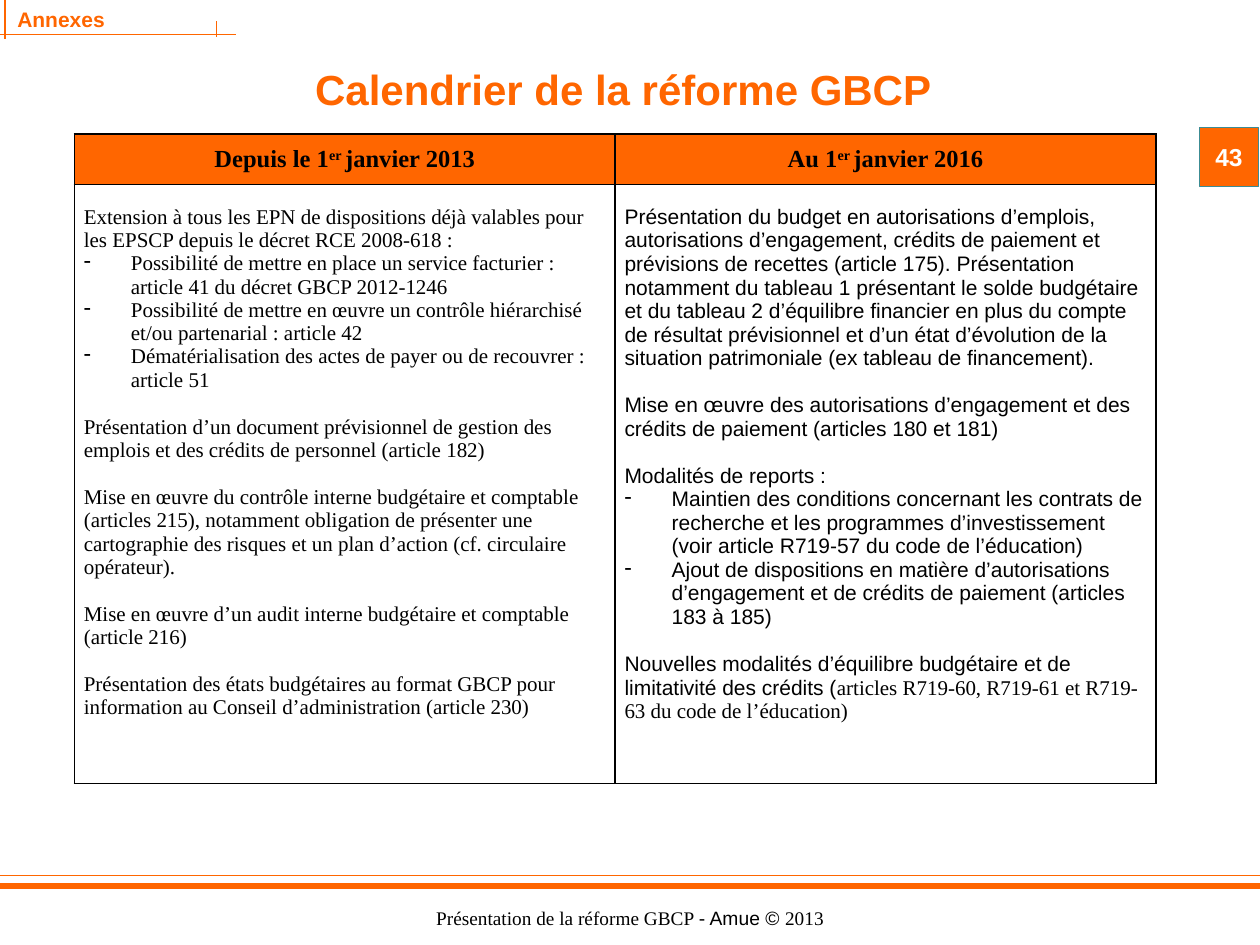
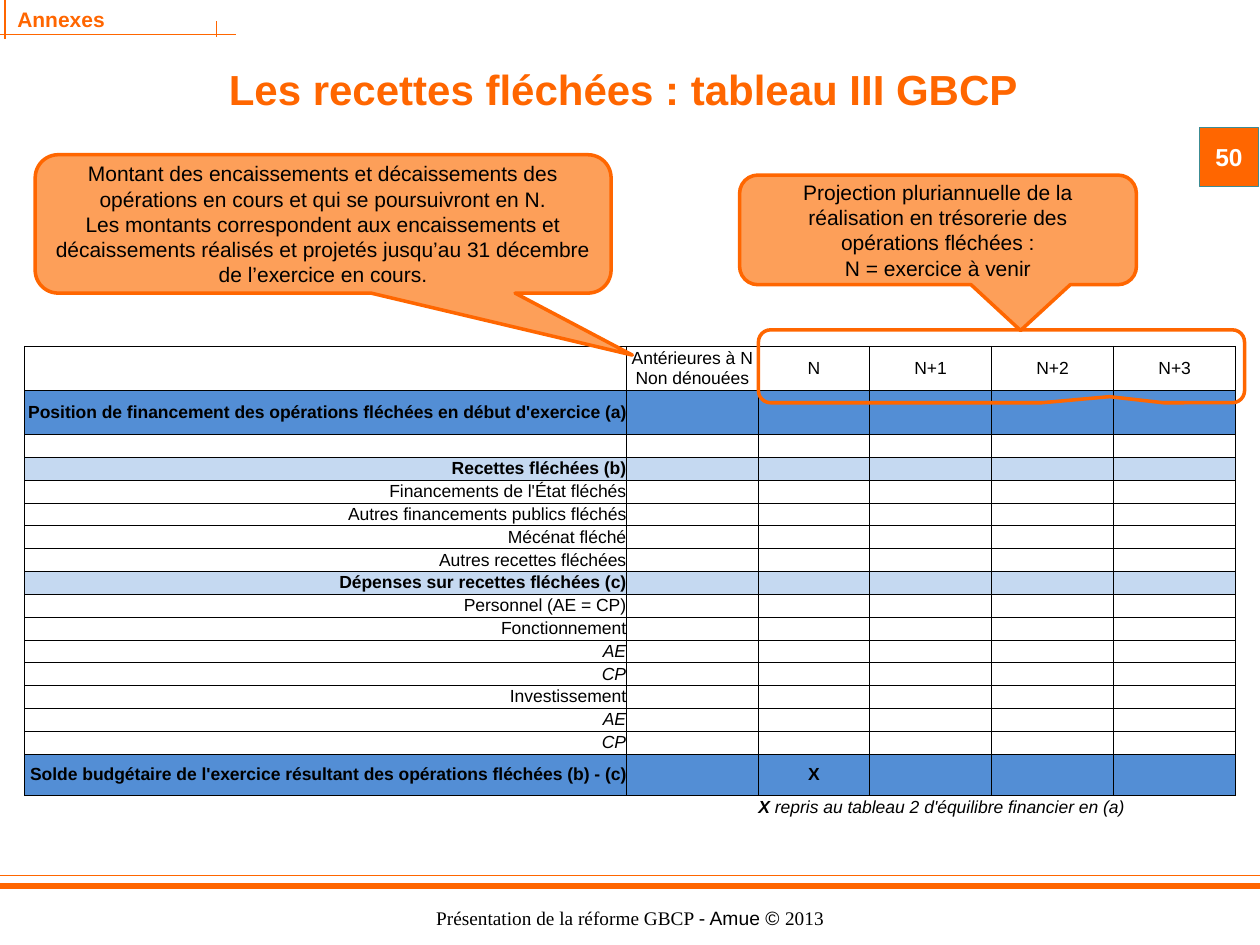
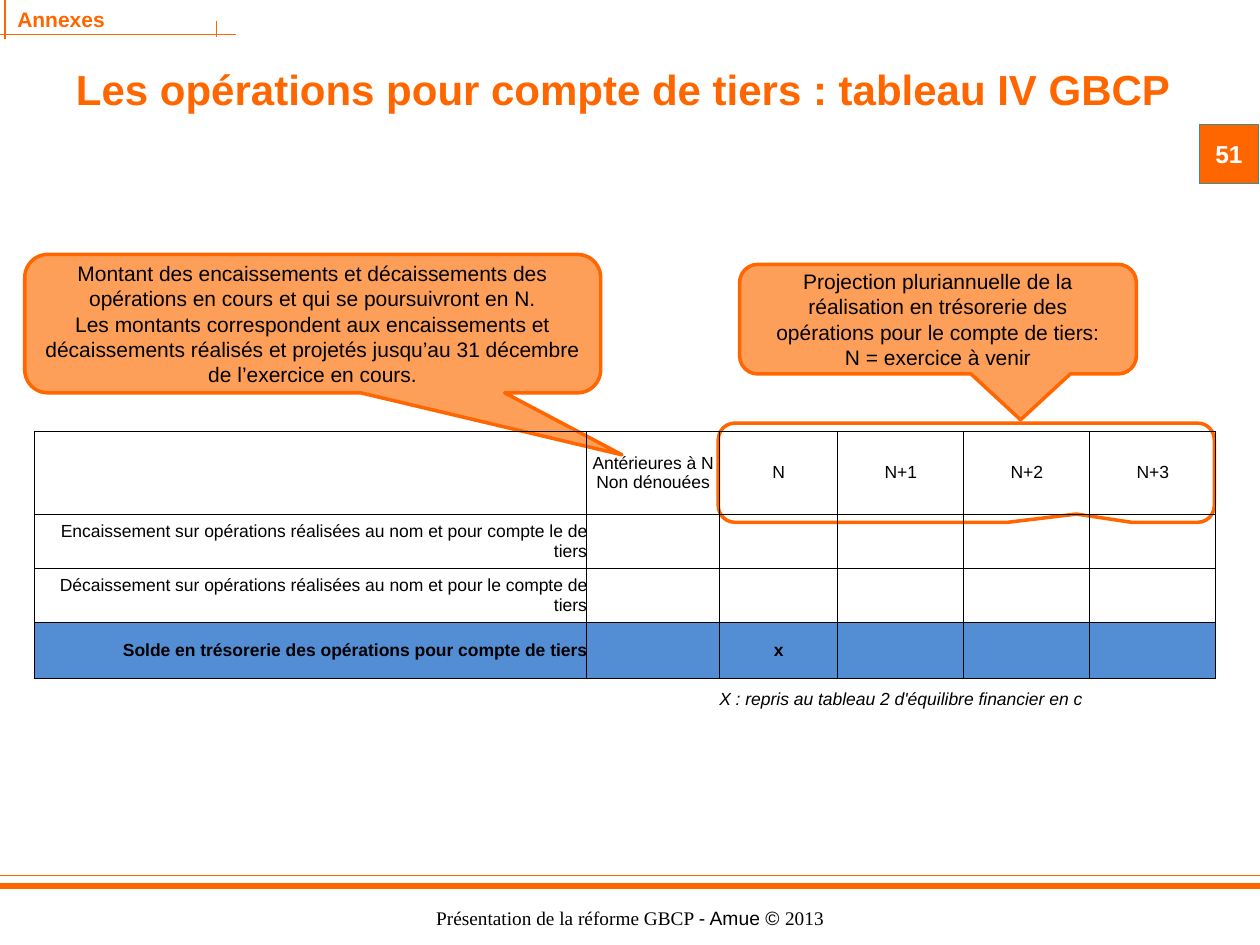
from lxml.etree import SubElement
from pptx import Presentation
from pptx.dml.color import RGBColor as RGB
from pptx.enum.shapes import MSO_CONNECTOR as LINK, MSO_SHAPE as SHAPE
from pptx.enum.text import MSO_ANCHOR as ANCHOR, PP_ALIGN as ALIGN
from pptx.oxml.ns import qn
from pptx.util import Cm, Pt

ORANGE, PEACH, TEAL = "FF6600", "FD9F59", "3C8C93"
BLUE, PALE, BLACK, WHITE = "538ED5", "C5D9F1", "000000", "FFFFFF"
SANS, SERIF = "Arial", "Times New Roman"
NO_GRID = "{2D5ABB26-0587-4C30-8999-92F81FD0307C}"

SINCE = [
    ("", "Extension à tous les EPN de dispositions déjà valables pour les EPSCP depuis le décret RCE 2008-618 :"),
    ("dash", "Possibilité de mettre en place un service facturier : article 41 du décret GBCP 2012-1246"),
    ("dash", "Possibilité de mettre en œuvre un contrôle hiérarchisé et/ou partenarial : article 42"),
    ("dash", "Dématérialisation des actes de payer ou de recouvrer : article 51"),
    ("gap", "Présentation d’un document prévisionnel de gestion des emplois et des crédits de personnel (article 182)"),
    ("gap", "Mise en œuvre du contrôle interne budgétaire et comptable (articles 215), notamment obligation de "
            "présenter une cartographie des risques et un plan d’action (cf. circulaire opérateur)."),
    ("gap", "Mise en œuvre d’un audit interne budgétaire et comptable (article 216)"),
    ("gap", "Présentation des états budgétaires au format GBCP pour information au Conseil d’administration "
            "(article 230)"),
]
FROM_2016 = [
    ("", "Présentation du budget en autorisations d’emplois, autorisations d’engagement, crédits de paiement et "
         "prévisions de recettes (article 175). Présentation notamment du tableau 1 présentant le solde budgétaire "
         "et du tableau 2 d’équilibre financier en plus du compte de résultat prévisionnel et d’un état "
         "d’évolution de la situation patrimoniale (ex tableau de financement)."),
    ("gap", "Mise en œuvre des autorisations d’engagement et des crédits de paiement (articles 180 et 181)"),
    ("gap", "Modalités de reports :"),
    ("dash", "Maintien des conditions concernant les contrats de recherche et les programmes d’investissement "
             "(voir article R719-57 du code de l’éducation)"),
    ("dash", "Ajout de dispositions en matière d’autorisations d’engagement et de crédits de paiement "
             "(articles 183 à 185)"),
    ("gap", "Nouvelles modalités d’équilibre budgétaire et de limitativité des crédits ("),
]
PAST = ["Montant des encaissements et décaissements des opérations en cours et qui se poursuivront en N.",
        "Les montants correspondent aux encaissements et décaissements réalisés et projetés jusqu’au "
        "31 décembre de l’exercice en cours."]
PLAN = "Projection pluriannuelle de la réalisation en trésorerie des opérations "
NEXT = "N = exercice à venir"
YEARS = ["N", "N+1", "N+2", "N+3"]
PLAIN, PART, ITAL = (None, False, False), (PALE, True, False), (None, False, True)
TOTAL = (BLUE, True, False)
ARROWED = [
    ("Position de financement des opérations fléchées en début d'exercice (a)", 0.89, TOTAL),
    ("", 0.46, PLAIN),
    ("Recettes fléchées (b)", 0.46, PART),
    ("Financements de l'État fléchés", 0.46, PLAIN),
    ("Autres financements publics fléchés", 0.46, PLAIN),
    ("Mécénat fléché", 0.46, PLAIN),
    ("Autres recettes fléchées", 0.46, PLAIN),
    ("Dépenses sur recettes fléchées (c)", 0.46, PART),
    ("Personnel (AE = CP)", 0.46, PLAIN),
    ("Fonctionnement", 0.46, PLAIN),
    ("AE", 0.46, ITAL),
    ("CP", 0.46, ITAL),
    ("Investissement", 0.46, PLAIN),
    ("AE", 0.46, ITAL),
    ("CP", 0.46, ITAL),
    ("Solde budgétaire de l'exercice résultant des opérations fléchées (b) - (c)", 0.84, TOTAL),
]
THIRD = [
    ("Encaissement sur opérations réalisées au nom et pour compte le de tiers", 1.09, PLAIN),
    ("Décaissement sur opérations réalisées au nom et pour le compte de tiers", 1.09, PLAIN),
    ("Solde en trésorerie des opérations pour compte de tiers", 1.13, TOTAL),
]


def color(code):
    """Turn a hex string into a colour."""
    return RGB.from_string(code)


def paint(fill, code):
    """Fill with a colour, or leave clear when there is none."""
    if code:
        fill.solid()
        fill.fore_color.rgb = color(code)
    else:
        fill.background()


def say(para, text, size, face=SANS, tint=BLACK, bold=False, ital=False, lift=0):
    """Add one run to a paragraph."""
    run = para.add_run()
    run.text = text
    font = run.font
    font.size, font.name, font.bold, font.italic = Pt(size), face, bold, ital
    font.color.rgb = color(tint)
    if lift:
        run._r.get_or_add_rPr().set("baseline", str(lift * 1000))


def label(slide, box, align=ALIGN.CENTER):
    """Add a text box and return its first paragraph."""
    frame = slide.shapes.add_textbox(*map(Cm, box)).text_frame
    frame.word_wrap = True
    frame.vertical_anchor = ANCHOR.MIDDLE
    para = frame.paragraphs[0]
    para.alignment = align
    return para


def rule(slide, ends, width=0.75):
    """Draw a straight orange line."""
    line = slide.shapes.add_connector(LINK.STRAIGHT, *map(Cm, ends))
    line.line.color.rgb = color(ORANGE)
    line.line.width = Pt(width)
    SubElement(line._element.spPr, qn("a:effectLst"))


def block(slide, kind, box, fill, edge, width):
    """Add a preset shape without shadow."""
    shape = slide.shapes.add_shape(kind, *map(Cm, box))
    shape.shadow.inherit = False
    paint(shape.fill, fill)
    shape.line.color.rgb = color(edge)
    shape.line.width = Pt(width)
    shape.text_frame.word_wrap = True
    shape.text_frame.vertical_anchor = ANCHOR.MIDDLE
    return shape


def bubble(slide, box, tip, lines=(), fill=None):
    """Add a rounded callout whose tip is given as shares of its size."""
    shape = block(slide, SHAPE.ROUNDED_RECTANGULAR_CALLOUT, box, fill, ORANGE, 2)
    for spot, share in enumerate((*tip, 0.167)):
        shape.adjustments[spot] = share
    frame = shape.text_frame
    for spot, line in enumerate(lines):
        para = frame.add_paragraph() if spot else frame.paragraphs[0]
        para.alignment = ALIGN.CENTER
        say(para, line, 12)


def past(slide, left, top):
    """Explain the column of earlier years."""
    bubble(slide, (left, top, 11.61, 2.79), (0.537, 0.948), PAST, PEACH)


def plan(slide, top, scope):
    """Explain the columns of coming years."""
    bubble(slide, (14.91, top, 8, 2.21), (0.208, 0.918), [PLAN + scope, NEXT], PEACH)


def ring(slide, box):
    """Outline the heads of the coming years."""
    bubble(slide, box, (0.222, 0.417))


def page(deck, title, number, top=2.57):
    """Add a slide with header, footer, title and page number."""
    slide = deck.slides.add_slide(deck.slide_layouts[6])
    rule(slide, (0, 17.65, 25.4, 17.65))
    rule(slide, (0, 17.86, 25.4, 17.86), 3)
    foot = label(slide, (4.37, 18.14, 16.66, 0.74))
    for text, face in (("Présentation de la réforme GBCP ", SERIF), ("- Amue © ", SANS), ("2013", SERIF)):
        say(foot, text, 11, face)
    say(label(slide, (0.1, 0, 5.79, 0.76), ALIGN.LEFT), "Annexes", 12, tint=ORANGE, bold=True)
    for ends in ((0.1, 0, 0.1, 0.79), (0, 0.69, 4.75, 0.69), (4.37, 0.74, 4.37, 0.43)):
        rule(slide, ends)
    say(label(slide, (1.12, 0.89, 22.89, 1.8)), title, 24, tint=ORANGE, bold=True)
    badge = block(slide, SHAPE.RECTANGLE, (24.18, top, 1.19, 1.19), ORANGE, TEAL, 0.75)
    frame = badge.text_frame
    frame.margin_left = frame.margin_right = Cm(0.1)
    para = frame.paragraphs[0]
    para.alignment = ALIGN.CENTER
    say(para, number, 14, tint=WHITE, bold=True)
    return slide


def grid(slide, left, top, cols, rows):
    """Add a plain table with the given column widths and row heights."""
    box = map(Cm, (left, top, sum(cols), sum(rows)))
    table = slide.shapes.add_table(len(rows), len(cols), *box).table
    table.first_row = table.horz_banding = False
    table._tbl.tblPr.find(qn("a:tableStyleId")).text = NO_GRID
    for col, width in zip(table.columns, cols):
        col.width = Cm(width)
    for row, height in zip(table.rows, rows):
        row.height = Cm(height)
    return table


def dress(cell, fill=None, sides="LRTB", width=0.5, pad=0):
    """Set borders, fill and margins of a cell, and return its first paragraph."""
    props = cell._tc.get_or_add_tcPr()
    for side in sides:
        edge = SubElement(props, qn("a:ln" + side), w=str(Pt(width)))
        SubElement(SubElement(edge, qn("a:solidFill")), qn("a:srgbClr"), val=BLACK)
    paint(cell.fill, fill)
    cell.margin_left = cell.margin_right = Cm(pad)
    cell.margin_top = cell.margin_bottom = 0
    cell.vertical_anchor = ANCHOR.MIDDLE
    return cell.text_frame.paragraphs[0]


def enter(cell, text, align, fill=None, bold=False, ital=False):
    """Write a budget cell, keeping empty ones low."""
    para = dress(cell, fill)
    para.alignment = align
    for spot, part in enumerate(text.split("\n")):
        if spot:
            para.add_line_break()
        if part:
            say(para, part, 10, bold=bold, ital=ital)
    if not text:
        SubElement(para._p, qn("a:endParaRPr"), sz="1000")


def budget(slide, left, top, cols, head, body, last, mark, note):
    """Add a budget table with its note in a last open row."""
    table = grid(slide, left, top, cols, [head, *(row[1] for row in body), last])
    for col, text in enumerate(["", "Antérieures à N\nNon dénouées", *YEARS]):
        enter(table.cell(0, col), text, ALIGN.CENTER)
    for row, (name, _, look) in enumerate(body, 1):
        enter(table.cell(row, 0), name, ALIGN.RIGHT, *look)
        for col in range(1, len(cols)):
            text = mark if (row, col) == (len(body), 2) else ""
            enter(table.cell(row, col), text, ALIGN.CENTER, *look)
    end = len(body) + 1
    table.cell(end, 2).merge(table.cell(end, len(cols) - 1))
    for col in range(len(cols)):
        para = dress(table.cell(end, col), sides="T")
        if col == 2:
            for text, bold in note:
                say(para, text, 10, bold=bold, ital=True)
        else:
            SubElement(para._p, qn("a:endParaRPr"), sz="1000")


def listing(cell, items, face):
    """Fill a cell with paragraphs and dashes, and return the last one."""
    dress(cell, width=1, pad=0.19)
    cell.margin_top = Cm(0.42)
    cell.vertical_anchor = ANCHOR.TOP
    frame = cell.text_frame
    for spot, (kind, text) in enumerate(items):
        para = frame.add_paragraph() if spot else frame.paragraphs[0]
        if kind == "dash":
            props = para._p.get_or_add_pPr()
            props.set("marL", str(Cm(0.95)))
            props.set("indent", str(Cm(-0.95)))
            SubElement(props, qn("a:buChar"), char="-")
        elif kind == "gap":
            para.space_before = Pt(13.5)
        say(para, text, 12, face)
    return para


def agenda(slide):
    """Add the table of reform dates."""
    table = grid(slide, 1.5, 2.7, [10.9, 10.9], [1.02, 12.07])
    for col, (start, end) in enumerate((("Depuis le 1", "janvier 2013"), ("Au 1", "janvier 2016"))):
        para = dress(table.cell(0, col), ORANGE, width=1, pad=0.19)
        para.alignment = ALIGN.CENTER
        for text, lift in ((start, 0), ("er ", 30), (end, 0)):
            say(para, text, 14, SERIF, bold=True, lift=lift)
    listing(table.cell(1, 0), SINCE, SERIF)
    last = listing(table.cell(1, 1), FROM_2016, SANS)
    say(last, "articles R719-60, R719-61 et R719-63 du code de l’éducation)", 12, SERIF)


def main():
    """Build the three slides."""
    deck = Presentation()
    deck.slide_width, deck.slide_height = Cm(25.4), Cm(19.05)

    agenda(page(deck, "Calendrier de la réforme GBCP", "43"))

    slide = page(deck, "Les recettes fléchées : tableau III GBCP", "50")
    plan(slide, 3.53, "fléchées :")
    budget(slide, 0.5, 6.98, [12.12, 2.67, 2.24] + [2.46] * 3, 0.89, ARROWED, 0.46, "X",
           [("X", True), (" repris au tableau 2 d'équilibre financier en (a)", False)])
    ring(slide, (15.29, 6.65, 9.8, 1.47))
    past(slide, 0.71, 3.12)

    slide = page(deck, "Les opérations pour compte de tiers : tableau IV GBCP", "51", 2.51)
    ring(slide, (14.48, 8.53, 10, 2))
    plan(slide, 5.33, "pour le compte de tiers:")
    past(slide, 0.5, 5.13)
    budget(slide, 0.7, 8.7, [11.13, 2.67, 2.39] + [2.54] * 3, 1.67, THIRD, 0.84, "x",
           [("X : repris au tableau 2 d'équilibre financier en c", False)])

    deck.save("out.pptx")


if __name__ == "__main__":
    main()
